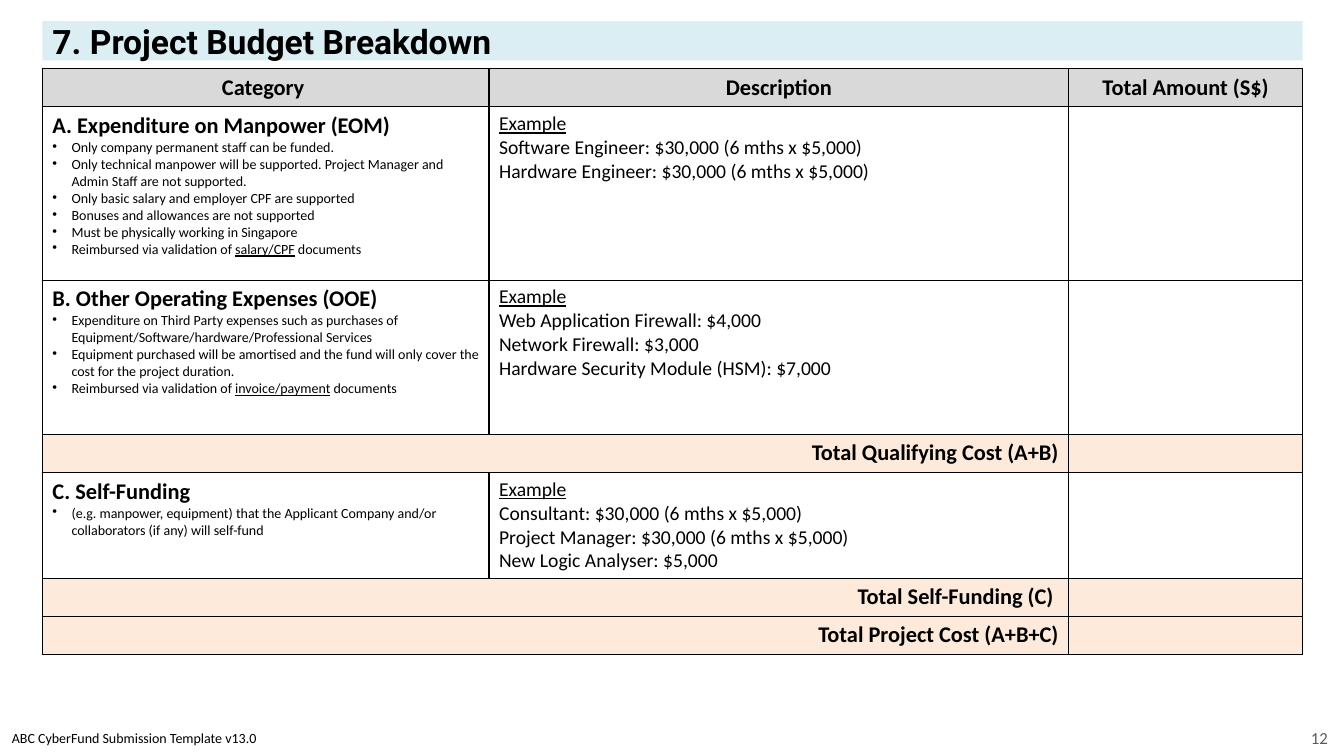
from lxml.etree import SubElement as add_sub
from pptx import Presentation
from pptx.dml.color import RGBColor
from pptx.enum.text import MSO_ANCHOR as Anchor, MSO_AUTO_SIZE as Fit, PP_ALIGN as Align
from pptx.oxml.ns import qn
from pptx.util import Inches, Pt

BLACK = RGBColor(0x00, 0x00, 0x00)
WHITE = RGBColor(0xFF, 0xFF, 0xFF)
GREY = RGBColor(0x59, 0x59, 0x59)
SILVER = RGBColor(0xD9, 0xD9, 0xD9)
PEACH = RGBColor(0xFD, 0xEA, 0xDA)
BLUE = RGBColor(0xDB, 0xEE, 0xF4)

WIDTHS = [4.43, 5.75, 2.32]
HEADS = ["Category ", "Description", "Total Amount (S$)"]
# Each row: height, then its cells' lines. Text between underscores is underlined.
ROWS = [
    (1.72, [
        "A. Expenditure on Manpower (EOM)",
        "Only company permanent staff can be funded.",
        "Only technical manpower will be supported. Project Manager and Admin Staff "
        "are not supported.",
        "Only basic salary and employer CPF are supported",
        "Bonuses and allowances are not supported",
        "Must be physically working in Singapore",
        "Reimbursed via validation of _salary/CPF_ documents",
    ], [
        "_Example_",
        "Software Engineer: $30,000 (6 mths x $5,000)",
        "Hardware Engineer: $30,000 (6 mths x $5,000)",
    ]),
    (1.53, [
        "B. Other Operating Expenses (OOE)",
        "Expenditure on Third Party expenses such as purchases of "
        "Equipment/Software/hardware/Professional Services",
        "Equipment purchased will be amortised and the fund will only cover the cost "
        "for the project duration.",
        "Reimbursed via validation of _invoice/payment_ documents",
    ], [
        "_Example_",
        "Web Application Firewall: $4,000",
        "Network Firewall: $3,000",
        "Hardware Security Module (HSM): $7,000",
    ]),
    (0.38, "Total Qualifying Cost (A+B)"),
    (1.04, [
        "C. Self-Funding",
        "(e.g. manpower, equipment) that the Applicant Company and/or collaborators "
        "(if any) will self-fund",
    ], [
        "_Example_",
        "Consultant: $30,000 (6 mths x $5,000)",
        "Project Manager: $30,000 (6 mths x $5,000)",
        "New Logic Analyser: $5,000",
    ]),
    (0.38, "Total Self-Funding (C) "),
    (0.38, "Total Project Cost (A+B+C)"),
]


def write(para, text, size, bold=False, color=BLACK, align=Align.LEFT, face="Calibri"):
    """Fill a paragraph, underlining the parts between underscores."""
    para.alignment = align
    font = para.font
    font.name, font.size, font.bold = face, Pt(size), bold
    font.color.rgb = color
    for i, part in enumerate(text.split("_")):
        if part:
            run = para.add_run()
            run.text = part
            if i % 2:
                run.font.underline = True


def fill_list(cell, lines, lead, rest, bullet=False):
    """Write a first line at size lead and the others at size rest."""
    frame = cell.text_frame
    for i, line in enumerate(lines):
        para = frame.add_paragraph() if i else frame.paragraphs[0]
        write(para, line, rest if i else lead, bold=bullet and i == 0)
        if bullet and i:
            props = para._p.get_or_add_pPr()
            props.set("marL", str(Inches(0.19)))
            props.set("indent", str(-Inches(0.19)))
            mark = props.makeelement(qn("a:buChar"), {"char": "•"})
            props.insert(0, mark)


prs = Presentation()
prs.slide_width, prs.slide_height = Inches(13.33), Inches(7.5)
slide = prs.slides.add_slide(prs.slide_layouts[5])

title = slide.shapes.title
title.left, title.top = Inches(0.42), Inches(0.21)
title.width, title.height = Inches(12.5), Inches(0.39)
title.fill.solid()
title.fill.fore_color.rgb = BLUE
frame = title.text_frame
frame.auto_size = Fit.NONE
frame.vertical_anchor = Anchor.MIDDLE
write(frame.paragraphs[0], "7. Project Budget Breakdown", 24, True, face="Roboto")

table = slide.shapes.add_table(
    len(ROWS) + 1, 3, Inches(0.42), Inches(0.68), Inches(12.5), Inches(5.81)).table
table.first_row = table.horz_banding = False
for col, width in zip(table.columns, WIDTHS):
    col.width = Inches(width)

for cell in table.iter_cells():
    props = cell._tc.get_or_add_tcPr()
    for side in ("a:lnL", "a:lnR", "a:lnT", "a:lnB"):
        line = add_sub(props, qn(side), w=str(Pt(1)))
        ink = add_sub(line, qn("a:solidFill"))
        add_sub(ink, qn("a:srgbClr"), val=str(BLACK))
    cell.fill.solid()
    cell.fill.fore_color.rgb = WHITE

table.rows[0].height = Inches(0.38)
for cell, head in zip(table.rows[0].cells, HEADS):
    cell.fill.fore_color.rgb = SILVER
    cell.vertical_anchor = Anchor.MIDDLE
    write(cell.text_frame.paragraphs[0], head, 16, True, align=Align.CENTER)

for r, (height, *texts) in enumerate(ROWS, 1):
    row = table.rows[r]
    row.height = Inches(height)
    first, second, amount = row.cells
    if len(texts) == 1:
        for cell in row.cells:
            cell.fill.fore_color.rgb = PEACH
            cell.text_frame.paragraphs[0].font.size = Pt(16)
        first.merge(second)
        write(first.text_frame.paragraphs[0], texts[0], 16, True, align=Align.RIGHT)
    else:
        fill_list(first, texts[0], 16, 10, bullet=True)
        fill_list(second, texts[1], 14, 14)

footer = slide.shapes.add_textbox(Inches(0.02), Inches(7.14), Inches(4.43), Inches(0.36))
number = slide.shapes.add_textbox(Inches(12.89), Inches(7.16), Inches(0.39), Inches(0.31))
for box in (footer, number):
    box.text_frame.word_wrap = True
    box.text_frame.vertical_anchor = Anchor.MIDDLE
frame = number.text_frame
frame.margin_left = frame.margin_right = frame.margin_top = frame.margin_bottom = 0
write(footer.text_frame.paragraphs[0], "ABC CyberFund Submission Template v13.0", 10)
write(frame.paragraphs[0], "12", 12, color=GREY, align=Align.CENTER)

prs.save("out.pptx")
